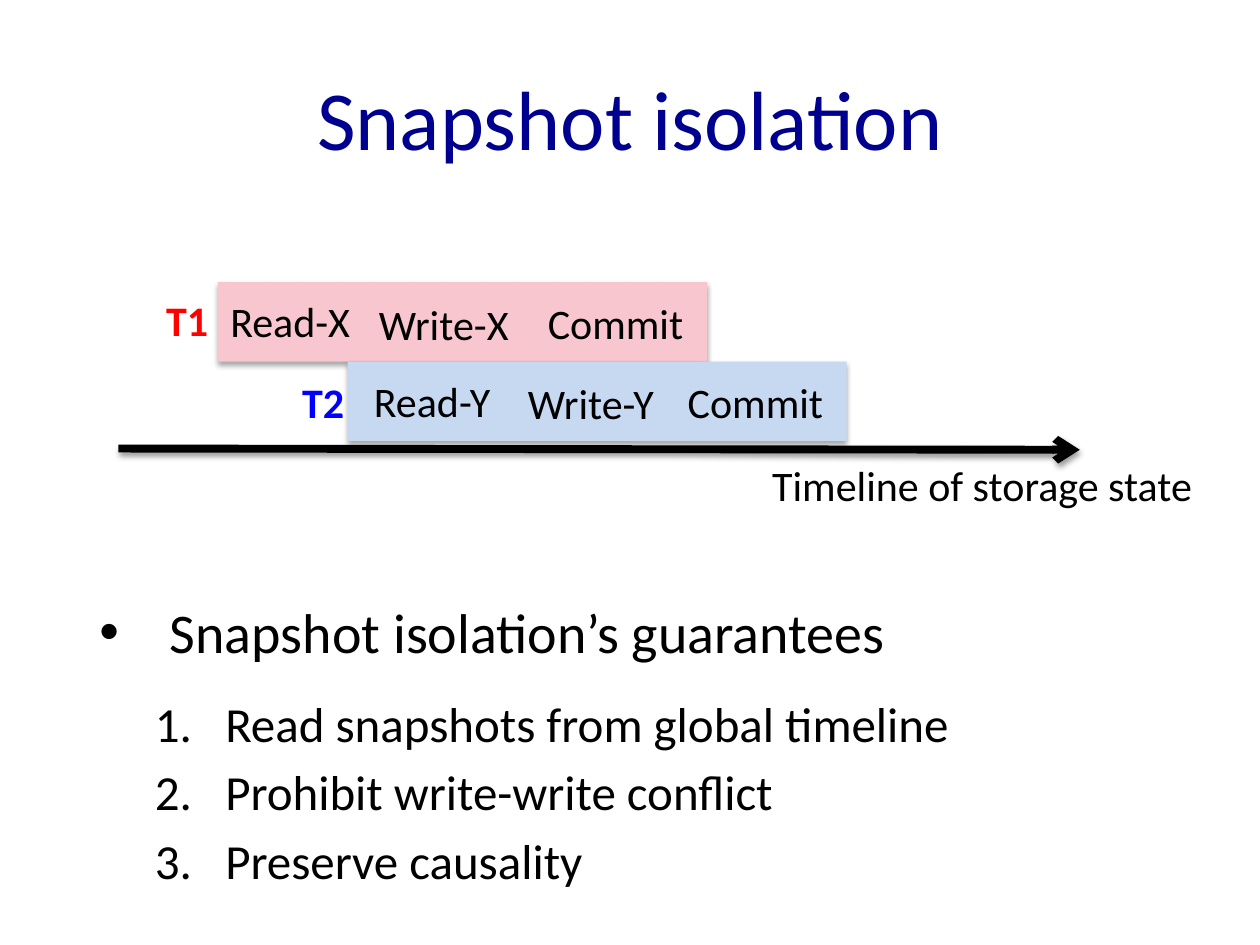
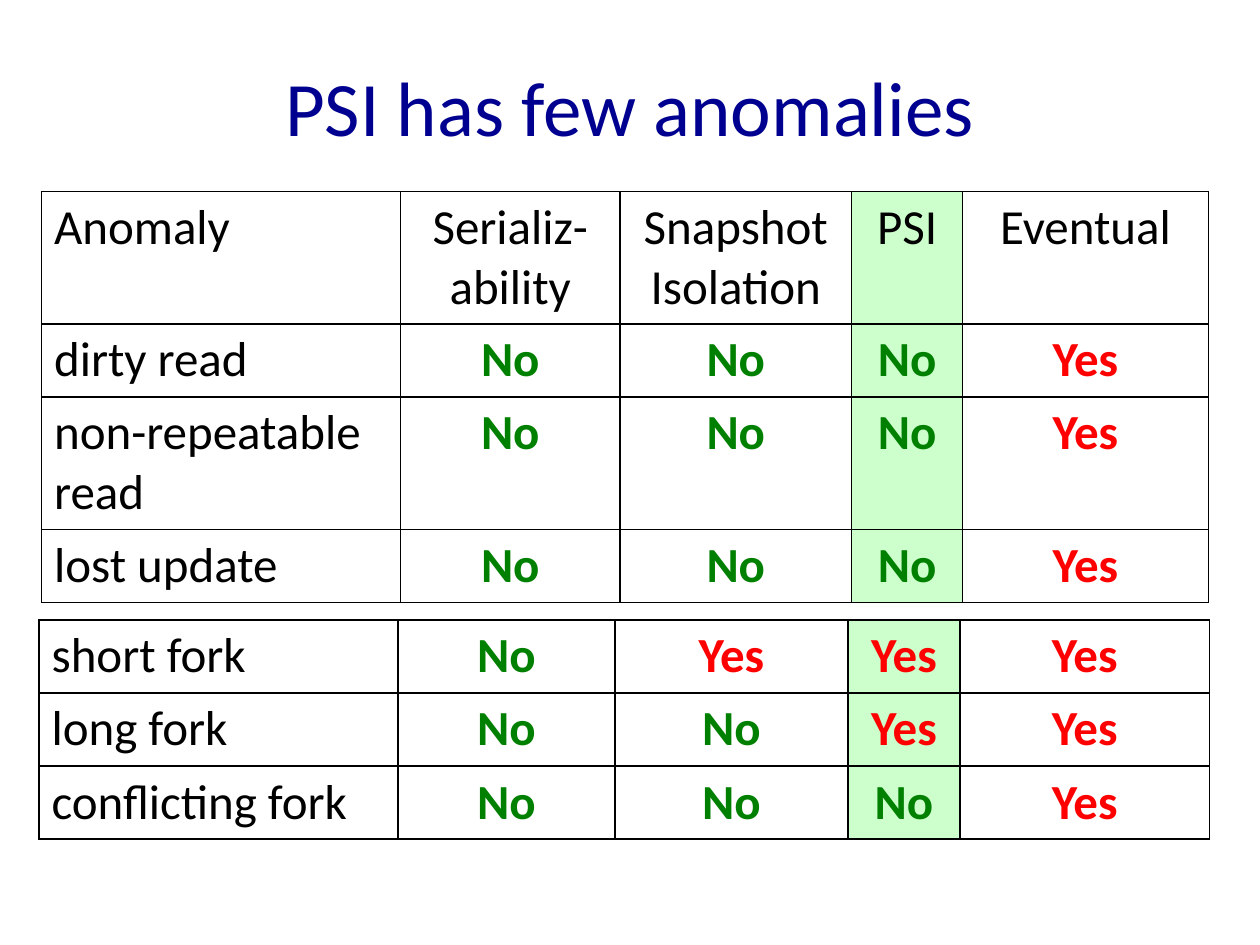
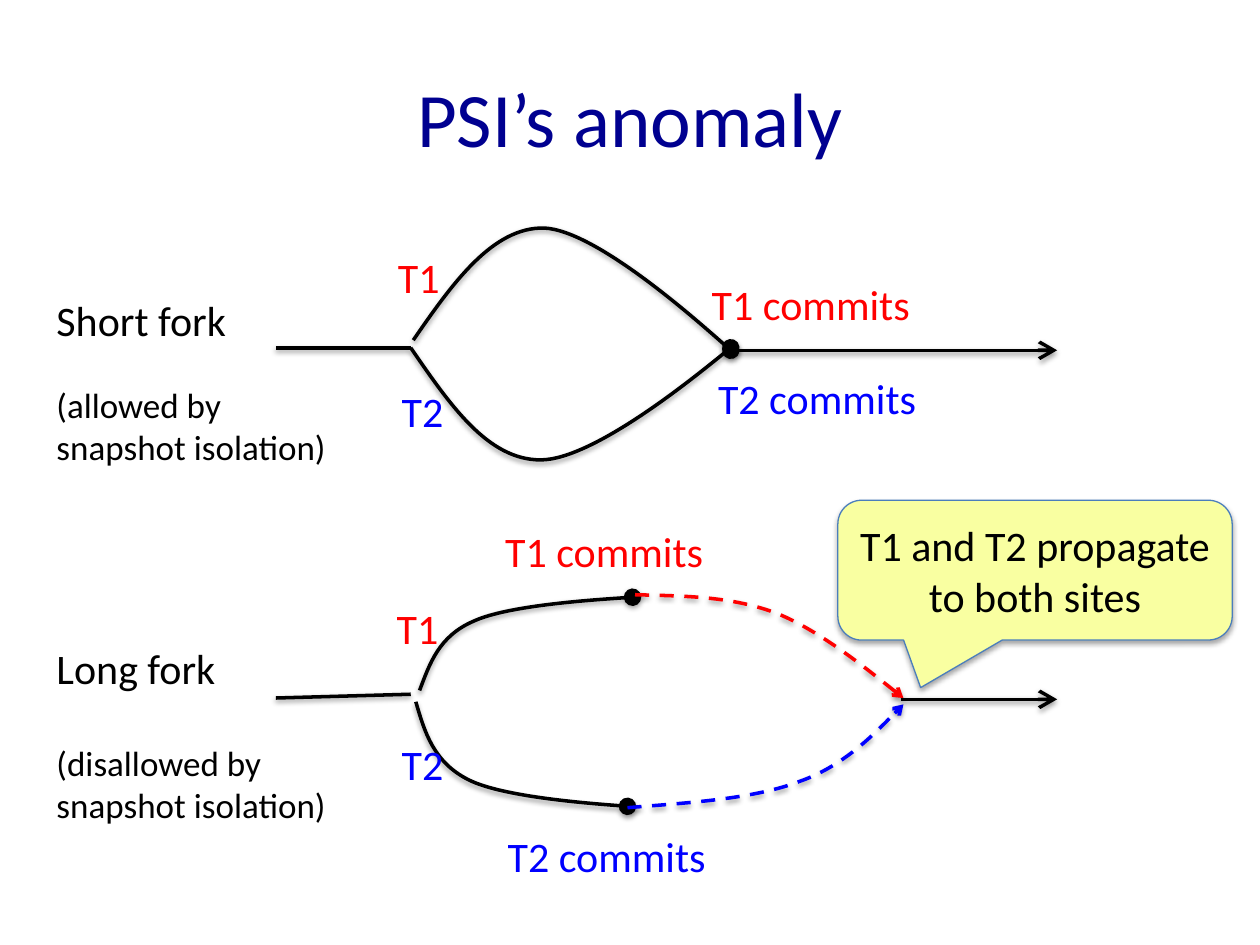
from lxml import etree
from pptx import Presentation, util as u
from pptx.dml.color import RGBColor
from pptx.enum import dml, shapes, text
from pptx.oxml.ns import qn

FONT = "Calibri"
COLORS = {
    "title": "000090", "ink": "000000",
    "t1": "FF0000", "t2": "0000FF", "t1_bar": "F7C6CE", "t2_bar": "C6D9F1",
    "no": "008000", "yes": "FF0000", "psi": "CCFFCC",
    "callout": "F9FFA1", "callout_edge": "4B7EBC",
}
LEFT, CENTER = text.PP_ALIGN.LEFT, text.PP_ALIGN.CENTER
SHAPE_SHADOW = (35, 1.8)
LINE_SHADOW = (38, 1.6)


def rgb(name):
    """Return the palette colour with this name."""
    return RGBColor.from_string(COLORS[name])


def box(*lengths):
    """Turn numbers in inches into lengths."""
    return [u.Inches(v) for v in lengths]


def add_xml(parent, tag, **attrs):
    """Append a DrawingML element and return it."""
    return etree.SubElement(parent, qn(tag), {k: str(v) for k, v in attrs.items()})


def add_run(p, words, size, color="ink", bold=False):
    """Add one formatted run to a paragraph."""
    r = p.add_run()
    r.text = words
    r.font.name, r.font.size, r.font.bold = FONT, u.Pt(size), bold
    r.font.color.rgb = rgb(color)


def add_shadow(sp, opacity, distance):
    """Give a shape or line a soft shadow that falls straight down."""
    spPr = sp.element.spPr
    effects = spPr.find(qn("a:effectLst"))
    if effects is None:
        effects = add_xml(spPr, "a:effectLst")
    shadow = add_xml(effects, "a:outerShdw", blurRad=u.Pt(3.1), dist=u.Pt(distance),
                     dir=5400000, rotWithShape=0)
    add_xml(add_xml(shadow, "a:srgbClr", val=COLORS["ink"]), "a:alpha", val=opacity * 1000)


def style_line(sp, width, color="ink", tail=None, tail_size="med", dashed=False):
    """Style a stroke with its end mark and shadow."""
    sp.line.color.rgb = rgb(color)
    sp.line.width = u.Pt(width)
    if dashed:
        sp.line.dash_style = dml.MSO_LINE.DASH
    if tail:
        add_xml(sp.element.spPr.find(qn("a:ln")), "a:tailEnd",
                type=tail, w=tail_size, len=tail_size)
    add_shadow(sp, *LINE_SHADOW)


def add_line(s, start, end, width=2, **style):
    """Draw a straight line between two points."""
    sp = s.shapes.add_connector(shapes.MSO_CONNECTOR.STRAIGHT, *box(*start, *end))
    style_line(sp, width, **style)


def add_curve(s, points, **style):
    """Draw a chain of cubic curves through their control points."""
    track = [box(*point) for point in points]
    builder = s.shapes.build_freeform(*track[0])
    builder.add_line_segments(track[1:], close=False)
    sp = builder.convert_to_shape()
    outline = next(sp.element.iter(qn("a:path")))
    segments = outline.findall(qn("a:lnTo"))
    for i in range(0, len(segments), 3):
        cubic = add_xml(outline, "a:cubicBezTo")
        for segment in segments[i:i + 3]:
            cubic.append(segment[0])
            outline.remove(segment)
    sp.shadow.inherit = False
    sp.fill.background()
    style_line(sp, 2, **style)


def add_panel(s, kind, area, fill):
    """Add a filled preset shape with a shadow and no outline."""
    sp = s.shapes.add_shape(kind, *box(*area))
    sp.shadow.inherit = False
    sp.fill.solid()
    sp.fill.fore_color.rgb = rgb(fill)
    sp.line.fill.background()
    add_shadow(sp, *SHAPE_SHADOW)
    return sp


def add_label(s, area, words, color="ink", size=24, bold=False, wrap=False, align=LEFT):
    """Add a one-run text box and return its frame."""
    tf = s.shapes.add_textbox(*box(*area)).text_frame
    tf.word_wrap = wrap
    tf.auto_size = text.MSO_AUTO_SIZE.SHAPE_TO_FIT_TEXT
    p = tf.paragraphs[0]
    p.alignment = align
    add_run(p, words, size, color, bold)
    return tf


def add_slide(prs, title, size=44, top=0.3):
    """Add a blank slide with the shared title."""
    s = prs.slides.add_slide(prs.slide_layouts[6])
    tf = add_label(s, (0.5, top, 9, 1.25), title, "title", size, wrap=True, align=CENTER)
    tf.auto_size = text.MSO_AUTO_SIZE.NONE
    tf.vertical_anchor = text.MSO_ANCHOR.MIDDLE
    return s


def transaction(s, x, y, w, name, label_at, operations):
    """Draw a transaction bar with its name and operations."""
    add_panel(s, shapes.MSO_SHAPE.RECTANGLE, (x, y, w, 0.63), f"{name.lower()}_bar")
    dx, dy = label_at
    add_label(s, (x + dx, y + dy, 0.54, 0.5), name, name.lower(), bold=True)
    for words, dx, dy, width in operations:
        add_label(s, (x + dx, y + dy, width, 0.5), words)
    tf = add_label(s, (x + w - 1.45, y + 0.07, 1.45, 0.5), "Commit", wrap=True, align=CENTER)
    tf.margin_left = tf.margin_right = 0


def guarantees(s, area, heading, items):
    """Write a bulleted heading above a numbered list."""
    tf = s.shapes.add_textbox(*box(*area)).text_frame
    tf.word_wrap = True
    for i, words in enumerate([heading] + items):
        p = tf.add_paragraph() if i else tf.paragraphs[0]
        p.space_before = u.Pt((0, 16.4)[i] if i < 2 else 5.6)
        pPr = p._p.get_or_add_pPr()
        pPr.set("marL", str(u.Inches(1 if i else 0.56)))
        pPr.set("indent", str(u.Inches(-0.56)))
        add_xml(pPr, "a:buFont", typeface=FONT if i else "Arial")
        if i:
            p.level = 1
            add_xml(pPr, "a:buAutoNum", type="arabicPeriod")
        else:
            add_xml(pPr, "a:buChar", char="•")
        add_run(p, words, 28 if i else 32)


def anomaly_table(s, x, y, widths, heights, rows):
    """Add a ruled table whose PSI column is tinted."""
    table = s.shapes.add_table(len(rows), len(widths),
                               *box(x, y, sum(widths), sum(heights))).table
    table.first_row = table.horz_banding = False
    for column, width in zip(table.columns, widths):
        column.width = u.Inches(width)
    for i, row in enumerate(rows):
        table.rows[i].height = u.Inches(heights[i])
        for j, words in enumerate(row):
            cell = table.cell(i, j)
            tcPr = cell._tc.get_or_add_tcPr()
            for side in "LRTB":
                ln = add_xml(tcPr, f"a:ln{side}", w=u.Pt(1))
                add_xml(add_xml(ln, "a:solidFill"), "a:srgbClr", val=COLORS["ink"])
            if j == 3:
                cell.fill.solid()
                cell.fill.fore_color.rgb = rgb("psi")
            else:
                cell.fill.background()
            p = cell.text_frame.paragraphs[0]
            p.alignment = CENTER if j else LEFT
            verdict = words in ("Yes", "No")
            add_run(p, words, 28, words.lower() if verdict else "ink", verdict)


def fork(s, x, y, stem_end, curves, arrow, labels):
    """Draw a fork from its stem to its closing arrow, with labels."""
    def at(point):
        return x + point[0], y + point[1]

    add_line(s, (x, y), at(stem_end))
    for points, style in curves:
        add_curve(s, [at(point) for point in points], **style)
    add_line(s, at(arrow[0]), at(arrow[1]), tail="arrow", tail_size="lg")
    for words, point in labels:
        width = 0.54 if len(words) == 2 else 1.82
        add_label(s, (*at(point), width, 0.5), words, words[:2].lower())


def fork_caption(s, x, y, h, name, gap, notes):
    """Write a fork's name with a smaller note below."""
    tf = add_label(s, (x, y, 2.36, h), name)
    for i, note in enumerate(notes):
        p = tf.add_paragraph()
        p.space_before = u.Pt(0 if i else gap)
        add_run(p, note, 20)


def callout(s, area, words):
    """Add a speech bubble that points down to the left."""
    sp = add_panel(s, shapes.MSO_SHAPE.ROUNDED_RECTANGULAR_CALLOUT, area, "callout")
    for i, value in enumerate((-0.29, 0.84, 0.17)):
        sp.adjustments[i] = value
    sp.line.color.rgb = rgb("callout_edge")
    sp.line.width = u.Pt(0.75)
    tf = sp.text_frame
    tf.word_wrap = True
    tf.vertical_anchor = text.MSO_ANCHOR.MIDDLE
    p = tf.paragraphs[0]
    p.alignment = CENTER
    add_run(p, words, 24)


def isolation_slide(prs):
    """Build the slide on snapshot isolation."""
    s = add_slide(prs, "Snapshot isolation", 48)
    add_line(s, (0.94, 3.56), (8.57, 3.57), 4.5, tail="arrow")
    add_label(s, (6.03, 3.6, 3.74, 0.5), "Timeline of storage state", wrap=True)
    transaction(s, 1.73, 2.24, 3.88, "T1", (-0.51, 0.05),
                [("Read-X", 0, 0.06, 1.16), ("Write-X", 1.18, 0.08, 1.24)])
    transaction(s, 2.76, 2.87, 3.96, "T2", (-0.46, 0.07),
                [("Read-Y", 0.11, 0.06, 1.14), ("Write-Y", 1.33, 0.08, 1.21)])
    guarantees(s, (0.69, 4.69, 8.54, 2.33), "Snapshot isolation’s guarantees",
               ["Read snapshots from global timeline", "Prohibit write-write conflict",
                "Preserve causality"])


def anomalies_slide(prs):
    """Build the slide that compares anomalies."""
    s = add_slide(prs, "PSI has few anomalies", top=0.21)
    anomaly_table(s, 0.31, 4.92, (2.85, 1.72, 1.85, 0.89, 1.98), [0.58] * 3, [
        ("short fork", "No", "Yes", "Yes", "Yes"),
        ("long fork", "No", "No", "Yes", "Yes"),
        ("conflicting fork", "No", "No", "No", "Yes"),
    ])
    safe = ("No", "No", "No", "Yes")
    anomaly_table(s, 0.33, 1.52, (2.85, 1.74, 1.84, 0.88, 1.95), [1.05, 0.58, 1.05, 0.58], [
        ("Anomaly", "Serializ-ability", "Snapshot Isolation", "PSI", "Eventual"),
        ("dirty read", *safe),
        ("non-repeatable read", *safe),
        ("lost update", *safe),
    ])


def forks_slide(prs):
    """Build the slide that shows the short and the long fork."""
    s = add_slide(prs, "PSI’s anomaly")
    commit = {"tail": "oval", "tail_size": "lg"}
    fork(s, 2.19, 2.76, (1.07, 0), [
        ([(1.09, -0.06), (1.4, -0.51), (1.72, -0.96), (2.13, -0.95),
          (2.55, -0.93), (3.61, 0.02), (3.61, 0.02)], commit),
        ([(1.07, 0), (1.38, 0.45), (1.68, 0.89), (2.1, 0.89),
          (2.53, 0.89), (3.61, 0), (3.61, 0)], commit),
    ], [(3.61, 0.02), (6.2, 0.02)], [
        ("T1", (0.87, -0.81)), ("T2", (0.9, 0.25)),
        ("T1 commits", (3.36, -0.6)), ("T2 commits", (3.41, 0.15)),
    ])
    fork_caption(s, 0.35, 2.29, 1.48, "Short fork", 22, ["(allowed by", "snapshot isolation)"])
    fork(s, 2.19, 5.54, (1.07, -0.03), [
        ([(1.14, -0.06), (1.22, -0.27), (1.29, -0.49), (1.57, -0.61),
          (1.85, -0.74), (2.83, -0.8), (2.83, -0.8)], commit),
        ([(1.11, 0.03), (1.18, 0.27), (1.25, 0.51), (1.53, 0.65),
          (1.81, 0.79), (2.79, 0.86), (2.79, 0.86)], commit),
        ([(2.85, -0.82), (3.23, -0.81), (3.62, -0.81), (3.98, -0.67),
          (4.33, -0.53), (4.98, 0), (4.98, 0)], {"tail": "arrow", "color": "t1", "dashed": True}),
        ([(2.79, 0.87), (3.29, 0.83), (3.8, 0.8), (4.16, 0.66),
          (4.53, 0.53), (4.98, 0.05), (4.98, 0.05)],
         {"tail": "arrow", "color": "t2", "dashed": True}),
    ], [(4.96, 0.01), (6.2, 0.01)], [
        ("T1", (0.86, -0.81)), ("T2", (0.9, 0.27)),
        ("T1 commits", (1.72, -1.42)), ("T2 commits", (1.74, 1)),
    ])
    fork_caption(s, 0.35, 5.05, 1.92, "Long fork", 28, ["(disallowed by", "snapshot isolation)"])
    callout(s, (6.65, 3.97, 3.13, 1.11), "T1 and T2 propagate to both sites")


def main():
    """Build the presentation and save it."""
    prs = Presentation()
    prs.slide_width, prs.slide_height = box(10, 7.5)
    isolation_slide(prs)
    anomalies_slide(prs)
    forks_slide(prs)
    prs.save("out.pptx")


if __name__ == "__main__":
    main()
